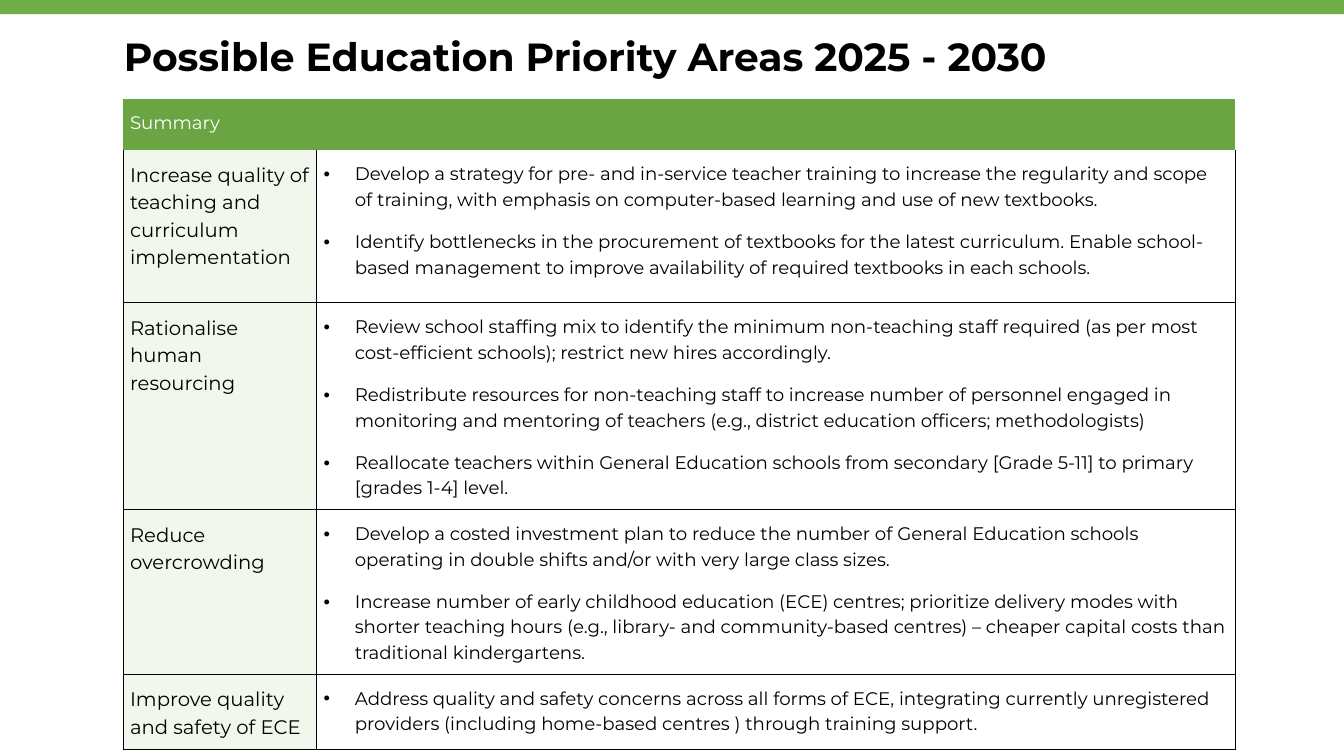
from lxml import etree
from pptx import Presentation
from pptx.dml.color import RGBColor
from pptx.enum.shapes import MSO_SHAPE
from pptx.enum.text import MSO_AUTO_SIZE
from pptx.oxml.ns import qn
from pptx.util import Inches, Pt

RECTANGLE = MSO_SHAPE.RECTANGLE
GROW_TO_FIT = MSO_AUTO_SIZE.SHAPE_TO_FIT_TEXT
BAND_GREEN = RGBColor(0x70, 0xAD, 0x47)
HEADER_GREEN = RGBColor(0x6A, 0xA4, 0x43)
PALE_GREEN = RGBColor(0xF1, 0xF7, 0xED)
BLACK = RGBColor(0, 0, 0)
WHITE = RGBColor(0xFF, 0xFF, 0xFF)
FONT = "Montserrat"

COLUMN_WIDTHS = [1.92, 9.11]
HEADER_HEIGHT = 0.47
PRIORITIES = [
    (1.52, "Increase quality of teaching and curriculum implementation", [
        "Develop a strategy for pre- and in-service teacher training to increase the regularity "
        "and scope of training, with emphasis on computer-based learning and use of new textbooks.",
        "Identify bottlenecks in the procurement of textbooks for the latest curriculum. Enable "
        "school-based management to improve availability of required textbooks in each schools."]),
    (2.05, "Rationalise human resourcing", [
        "Review school staffing mix to identify the minimum non-teaching staff required "
        "(as per most cost-efficient schools); restrict new hires accordingly.",
        "Redistribute resources for non-teaching staff to increase number of personnel engaged in "
        "monitoring and mentoring of teachers (e.g., district education officers; methodologists)",
        "Reallocate teachers within General Education schools from secondary [Grade 5-11] "
        "to primary [grades 1-4] level."]),
    (1.62, "Reduce overcrowding", [
        "Develop a costed investment plan to reduce the number of General Education schools "
        "operating in double shifts and/or with very large class sizes.",
        "Increase number of early childhood education (ECE) centres; prioritize delivery modes "
        "with shorter teaching hours (e.g., library- and community-based centres) – cheaper "
        "capital costs than traditional kindergartens."]),
    (0.74, "Improve quality and safety of ECE", [
        "Address quality and safety concerns across all forms of ECE, integrating currently "
        "unregistered providers (including home-based centres ) through training support."]),
]


def write_paragraphs(frame, texts, size, color=BLACK, bold=False, bulleted=False):
    for index, text in enumerate(texts):
        para = frame.paragraphs[0] if index == 0 else frame.add_paragraph()
        para.text = text
        para.line_spacing = 1.15
        para.space_before = para.space_after = Pt(6)
        para.font.name = FONT
        para.font.size = Pt(size)
        para.font.bold = bold
        para.font.color.rgb = color
        if bulleted:
            properties = para._p.get_or_add_pPr()
            properties.set("marL", str(Inches(0.31)))
            properties.set("indent", str(-Inches(0.31)))
            bullet_font = etree.Element(qn("a:buFont"), typeface="Arial")
            bullet = etree.Element(qn("a:buChar"), char="•")
            default_run = properties.find(qn("a:defRPr"))
            default_run.addprevious(bullet_font)
            default_run.addprevious(bullet)


def style_cell(cell, fill_color, ruled_sides):
    """Set margins, borders (L, R, T, B; black where ruled) and fill, in schema order."""
    cell.margin_left = cell.margin_right = Inches(0.07)
    cell.margin_top = cell.margin_bottom = Inches(0.1)
    properties = cell._tc.get_or_add_tcPr()
    for side in "LRTB":
        line = etree.SubElement(properties, qn(f"a:ln{side}"), w=str(Pt(0.75)))
        if side in ruled_sides:
            solid = etree.SubElement(line, qn("a:solidFill"))
            etree.SubElement(solid, qn("a:srgbClr"), val=str(BLACK))
        else:
            etree.SubElement(line, qn("a:noFill"))
    if fill_color is None:
        cell.fill.background()
    else:
        cell.fill.solid()
        cell.fill.fore_color.rgb = fill_color


deck = Presentation()
deck.slide_width = Inches(13.33)
deck.slide_height = Inches(7.5)
page = deck.slides.add_slide(deck.slide_layouts[6])

top_band = page.shapes.add_shape(RECTANGLE, 0, 0, deck.slide_width, Inches(0.14))
top_band.shadow.inherit = False
top_band.fill.solid()
top_band.fill.fore_color.rgb = BAND_GREEN
top_band.line.fill.background()

row_heights = [HEADER_HEIGHT] + [height for height, _, _ in PRIORITIES]
table_frame = page.shapes.add_table(
    len(row_heights), len(COLUMN_WIDTHS), Inches(1.22), Inches(0.98),
    Inches(sum(COLUMN_WIDTHS)), Inches(sum(row_heights)))
table = table_frame.table
table.first_row = False
table.horz_banding = False
for column, width in zip(table.columns, COLUMN_WIDTHS):
    column.width = Inches(width)
for row, height in zip(table.rows, row_heights):
    row.height = Inches(height)

for cell in table.rows[0].cells:
    style_cell(cell, HEADER_GREEN, "")
write_paragraphs(table.cell(0, 0).text_frame, ["Summary"], 13, WHITE)

for row_index, (_, area, actions) in enumerate(PRIORITIES, start=1):
    ruled_sides = "LRB" if row_index == 1 else "LRTB"
    area_cell, action_cell = table.rows[row_index].cells
    style_cell(area_cell, PALE_GREEN, ruled_sides)
    style_cell(action_cell, None, ruled_sides)
    write_paragraphs(area_cell.text_frame, [area], 14)
    write_paragraphs(action_cell.text_frame, actions, 13, bulleted=True)

title_box = page.shapes.add_textbox(Inches(1.13), Inches(0.2), Inches(10.66), Inches(0.81))
title_box.text_frame.word_wrap = True
title_box.text_frame.auto_size = GROW_TO_FIT
write_paragraphs(title_box.text_frame, ["Possible Education Priority Areas 2025 - 2030"], 28, bold=True)

deck.save("out.pptx")
